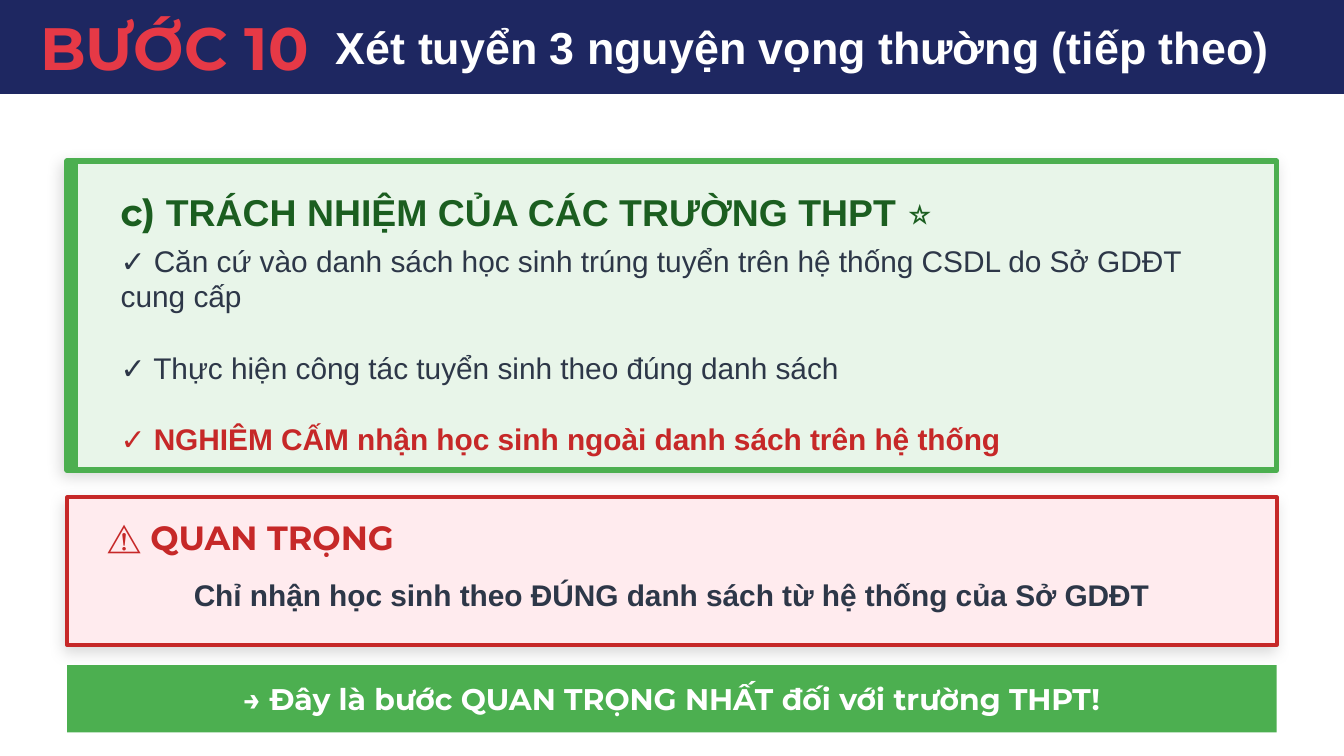
import pptx
import pptx.dml.color
import pptx.enum.shapes
import pptx.enum.text
import pptx.oxml
import pptx.oxml.ns
import pptx.util
from lxml import etree

PX = 4572
ALIGN = pptx.enum.text.PP_ALIGN
NAVY, CORAL, WHITE, INK = "1E2761", "E63946", "FFFFFF", "2D3748"
GREEN, DARK_GREEN, PALE_GREEN = "4CAF50", "1B5E20", "E8F5E9"
RED, PALE_RED = "C62828", "FFEBEE"


def px(length):
    """Turn px into EMU."""
    return pptx.util.Emu(length * PX)


def paint(color_format, value):
    """Set a colour from a hex string."""
    color_format.rgb = pptx.dml.color.RGBColor.from_string(value)


def add_shadow(shape):
    """Give a shape a soft drop shadow."""
    effects = shape._element.spPr.find(pptx.oxml.ns.qn("a:effectLst"))
    shadow = etree.SubElement(effects, pptx.oxml.ns.qn("a:outerShdw"),
                              blurRad="101600", dist="38100", dir="8100000",
                              algn="bl", rotWithShape="0")
    color = etree.SubElement(shadow, pptx.oxml.ns.qn("a:srgbClr"), val="000000")
    etree.SubElement(color, pptx.oxml.ns.qn("a:alpha"), val="15000")


def add_panel(page, left, top, width, height, fill, line=None, weight=0):
    """Draw a rectangle; an outlined one also casts a shadow."""
    panel = page.shapes.add_shape(pptx.enum.shapes.MSO_SHAPE.RECTANGLE,
                                  px(left), px(top), px(width), px(height))
    panel.fill.solid()
    paint(panel.fill.fore_color, fill)
    panel.shadow.inherit = False
    if line:
        paint(panel.line.color, line)
        panel.line.width = pptx.util.Pt(weight)
        add_shadow(panel)
    else:
        panel.line.fill.background()


def add_text(page, left, top, width, height, paras, size,
             align=ALIGN.LEFT, gap=0, inset=True):
    """Place paragraphs, each a list of (text, font, colour, bold) runs."""
    box = page.shapes.add_textbox(px(left), px(top), px(width), px(height))
    frame = box.text_frame
    frame.word_wrap = True
    frame.vertical_anchor = pptx.enum.text.MSO_ANCHOR.MIDDLE
    if not inset:
        frame.margin_left = frame.margin_right = 0
        frame.margin_top = frame.margin_bottom = 0
    for index, runs in enumerate(paras):
        para = frame.add_paragraph() if index else frame.paragraphs[0]
        para.alignment = align
        if index:
            para.space_before = pptx.util.Pt(gap)
        for text, font, color, bold in runs:
            span = para.add_run()
            span.text = text
            span.font.name = font
            span.font.size = pptx.util.Pt(size)
            span.font.bold = bold
            paint(span.font.color, color)


def add_header(page, left, top, width, height):
    """Draw the title band with its step number and title."""
    add_panel(page, left, top, width, height, NAVY)
    add_text(page, left + 60, top + 19, 440, 100,
             [[("BƯỚC 10", "Montserrat", CORAL, True)]], 32, inset=False)
    add_text(page, left + 500, top + 30, 1400, 80,
             [[("Xét tuyển 3 nguyện vọng thường (tiếp theo)", "Arial", WHITE, True)]],
             24, inset=False)


def add_duties(page, left, top, width, height):
    """Draw the green card listing the schools' duties."""
    add_panel(page, left, top, width, height, PALE_GREEN, GREEN, 3)
    add_panel(page, left, top, 16, height, GREEN)
    add_text(page, left + 60, top + 40, width - 120, 70, [[
        ("c) ", "Montserrat", DARK_GREEN, True),
        ("TRÁCH NHIỆM CỦA CÁC TRƯỜNG THPT ", "Arial", DARK_GREEN, True),
        ("⭐", "Montserrat", DARK_GREEN, True),
    ]], 20)
    add_text(page, left + 60, top + 130, width - 120, 300, [
        [("✓ Căn cứ vào danh sách học sinh trúng tuyển trên hệ thống CSDL "
          "do Sở GDĐT cung cấp", "Arial", INK, False)],
        [("✓ Thực hiện công tác tuyển sinh theo đúng danh sách", "Arial", INK, False)],
        [("✓ NGHIÊM CẤM nhận học sinh ngoài danh sách trên hệ thống",
          "Arial", RED, True)],
    ], 16, gap=19)


def add_warning(page, left, top, width, height):
    """Draw the red card with the key warning."""
    add_panel(page, left, top, width, height, PALE_RED, RED, 2)
    add_text(page, left + 40, top + 30, width - 80, 60,
             [[("⚠️ QUAN TRỌNG", "Montserrat", RED, True)]], 18)
    add_text(page, left + 40, top + 100, width - 80, 90,
             [[("Chỉ nhận học sinh theo ĐÚNG danh sách từ hệ thống của Sở GDĐT",
                "Arial", INK, True)]], 16, ALIGN.CENTER)


def add_footer(page, left, top, width, height):
    """Draw the closing green banner."""
    add_panel(page, left, top, width, height, GREEN)
    add_text(page, left + 40, top + 10, width - 80, height - 20,
             [[("→ Đây là bước QUAN TRỌNG NHẤT đối với trường THPT!",
                "Montserrat", WHITE, True)]], 16, ALIGN.CENTER)


def main():
    """Build and save the deck."""
    deck = pptx.Presentation()
    deck.slide_width, deck.slide_height = px(2000), px(1125)
    page = deck.slides.add_slide(deck.slide_layouts[6])
    add_header(page, 0, 0, 2000, 140)
    add_duties(page, 100, 240, 1800, 460)
    add_warning(page, 100, 740, 1800, 220)
    add_footer(page, 100, 990, 1800, 100)
    deck.save("out.pptx")


if __name__ == "__main__":
    main()
